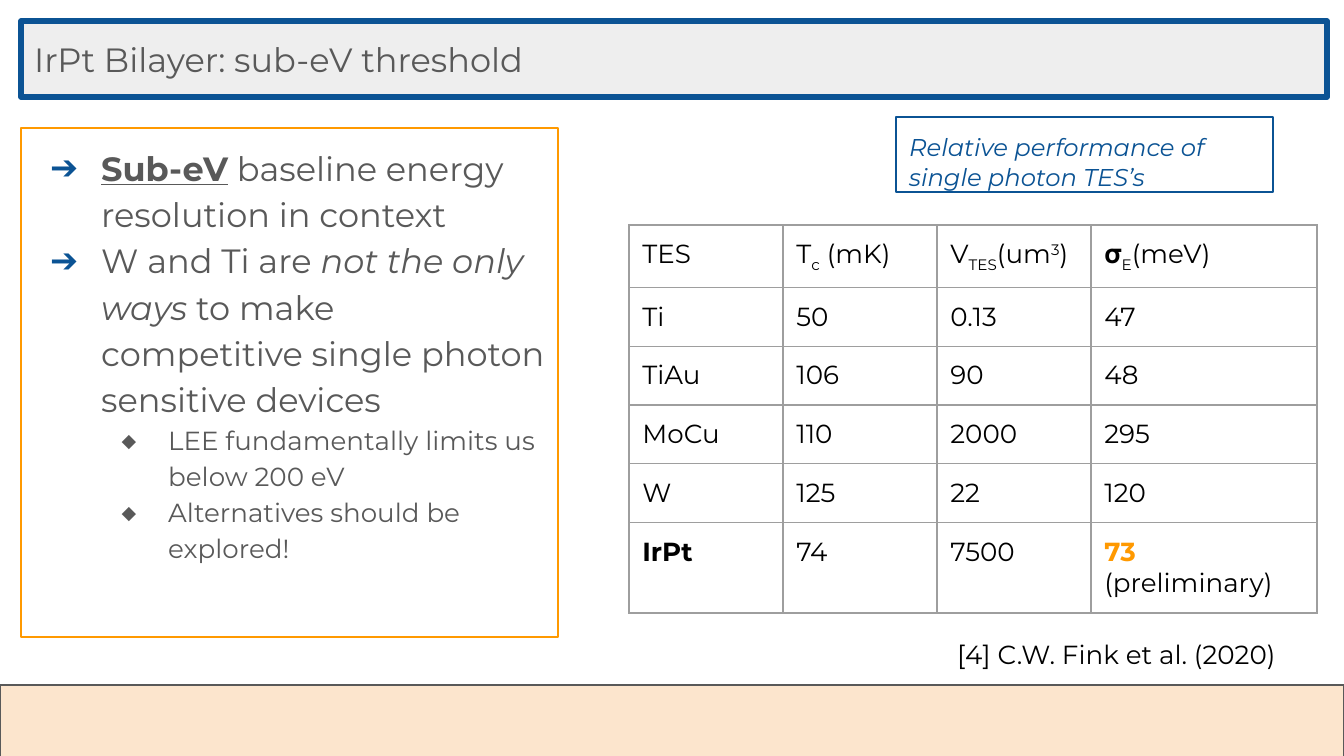
from lxml.etree import SubElement
from pptx import Presentation
from pptx.dml.color import RGBColor
from pptx.enum.shapes import MSO_SHAPE
from pptx.enum.text import MSO_ANCHOR as Anchor
from pptx.oxml.ns import qn
from pptx.util import Pt

PX = 914400 / 134.4
FONT = "Montserrat"
COLORS = {"grey": "595959", "blue": "0B5394", "orange": "FF9900", "panel": "EEEEEE",
          "peach": "FCE5CD", "border": "9E9E9E", "black": "000000"}

# Content: each paragraph or cell is a list of (text, *styles) runs
TITLE = [("IrPt Bilayer: sub-eV threshold",)]
CAPTION = [("Relative performance of single photon TES’s", "italic")]
CITATION = [("[4] C.W. Fink et al. (2020)",)]
POINTS = [
    (0, [("Sub-eV", "bold", "underline"), (" baseline energy resolution in context",)]),
    (0, [("W and Ti are ",), ("not the only ways", "italic"),
         (" to make competitive single photon sensitive devices",)]),
    (1, [("LEE fundamentally limits us below 200 eV",)]),
    (1, [("Alternatives should be explored!",)]),
]
# Per level: bullet, bullet colour, text size, left margin px, hanging px
LEVELS = [("➔", "blue", 18, 67, 51), ("◆", "grey", 14, 134, 47)]
HEADER = [
    [("TES",)],
    [("T",), ("c", "sub"), (" (mK)",)],
    [("V",), ("TES", "sub"), ("(um",), ("3", "super"), (")",)],
    [("𝛔",), ("E", "sub"), ("(meV)",)],
]
DEVICES = [
    ("Ti", "50", "0.13", "47"),
    ("TiAu", "106", "90", "48"),
    ("MoCu", "110", "2000", "295"),
    ("W", "125", "22", "120"),
]
OUR_DEVICE = [[("IrPt", "bold")], [("74",)], [("7500",)],
              [("73", "bold", "orange"), (" (preliminary)",)]]
ROWS = [HEADER, *([[(value,)] for value in device] for device in DEVICES), OUR_DEVICE]
COLUMN_WIDTHS = [154, 154, 154, 226]
ROW_HEIGHT = 56
BASELINES = {"sub": "-25000", "super": "30000"}


def px(length):
    return round(length * PX)


def rgb(name):
    return RGBColor.from_string(COLORS[name])


def write(paragraph, runs, size, color):
    for text, *styles in runs:
        run = paragraph.add_run()
        run.text = text
        font = run.font
        font.name, font.size = FONT, Pt(size)
        font.color.rgb = rgb("orange" if "orange" in styles else color)
        for style in styles:
            if style in BASELINES:
                run._r.get_or_add_rPr().set("baseline", BASELINES[style])
            elif style != "orange":
                setattr(font, style, True)


def set_frame(frame, anchor=Anchor.TOP):
    frame.word_wrap = True
    frame.vertical_anchor = anchor
    frame.margin_left = frame.margin_right = px(13.44)
    frame.margin_top = frame.margin_bottom = px(13.44)
    return frame


def add_box(slide, area, line, width=0.75, fill=None, anchor=Anchor.TOP):
    box = slide.shapes.add_shape(MSO_SHAPE.RECTANGLE, *map(px, area))
    box.shadow.inherit = False
    if fill:
        box.fill.solid()
        box.fill.fore_color.rgb = rgb(fill)
    else:
        box.fill.background()
    box.line.color.rgb = rgb(line)
    box.line.width = Pt(width)
    frame = set_frame(box.text_frame, anchor)
    frame.paragraphs[0].alignment = 1
    return frame


def add_bullet(paragraph, level):
    mark, color, _, margin, hanging = LEVELS[level]
    paragraph.level = level
    paragraph.alignment = 1
    paragraph.line_spacing = 1.15
    props = paragraph._p.get_or_add_pPr()
    props.set("marL", str(px(margin)))
    props.set("indent", str(-px(hanging)))
    SubElement(SubElement(props, qn("a:buClr")), qn("a:srgbClr")).set("val", COLORS[color])
    SubElement(props, qn("a:buFont")).set("typeface", FONT)
    SubElement(props, qn("a:buChar")).set("char", mark)


def set_borders(cell):
    props = cell._tc.get_or_add_tcPr()
    for side in ("lnL", "lnR", "lnT", "lnB"):
        edge = SubElement(props, qn(f"a:{side}"), w=str(Pt(0.75)))
        fill = SubElement(edge, qn("a:solidFill"))
        SubElement(fill, qn("a:srgbClr")).set("val", COLORS["border"])


def main():
    deck = Presentation()
    deck.slide_width, deck.slide_height = px(1344), px(756)
    slide = deck.slides.add_slide(deck.slide_layouts[6])

    # Footer band and title bar
    add_box(slide, (0, 685, 1344, 76), "grey", fill="peach")
    title = add_box(slide, (21, 21, 1306, 76), "blue", 3, "panel", Anchor.MIDDLE)
    write(title.paragraphs[0], TITLE, 18, "grey")

    # Bulleted points
    points = add_box(slide, (21, 128, 537, 509), "orange")
    for index, (level, runs) in enumerate(POINTS):
        paragraph = points.add_paragraph() if index else points.paragraphs[0]
        add_bullet(paragraph, level)
        write(paragraph, runs, LEVELS[level][2], "grey")

    # Table caption
    caption = add_box(slide, (896, 117, 377, 75), "blue").paragraphs[0]
    caption.line_spacing = 1.05
    write(caption, CAPTION, 13, "blue")

    # Device comparison table
    table = slide.shapes.add_table(
        len(ROWS), len(COLUMN_WIDTHS), px(629), px(225),
        px(sum(COLUMN_WIDTHS)), px(ROW_HEIGHT * len(ROWS))).table
    table.first_row = table.horz_banding = False
    for column, width in zip(table.columns, COLUMN_WIDTHS):
        column.width = px(width)
    for r, row in enumerate(ROWS):
        table.rows[r].height = px(ROW_HEIGHT)
        for c, runs in enumerate(row):
            cell = table.cell(r, c)
            cell.margin_left = cell.margin_right = px(13.44)
            cell.margin_top = cell.margin_bottom = px(13.44)
            set_borders(cell)
            cell.fill.background()
            write(cell.text_frame.paragraphs[0], runs, 14, "black")

    # Citation
    citation = slide.shapes.add_textbox(px(944), px(625), px(372), px(56))
    write(set_frame(citation.text_frame).paragraphs[0], CITATION, 14, "black")

    deck.save("out.pptx")


if __name__ == "__main__":
    main()
